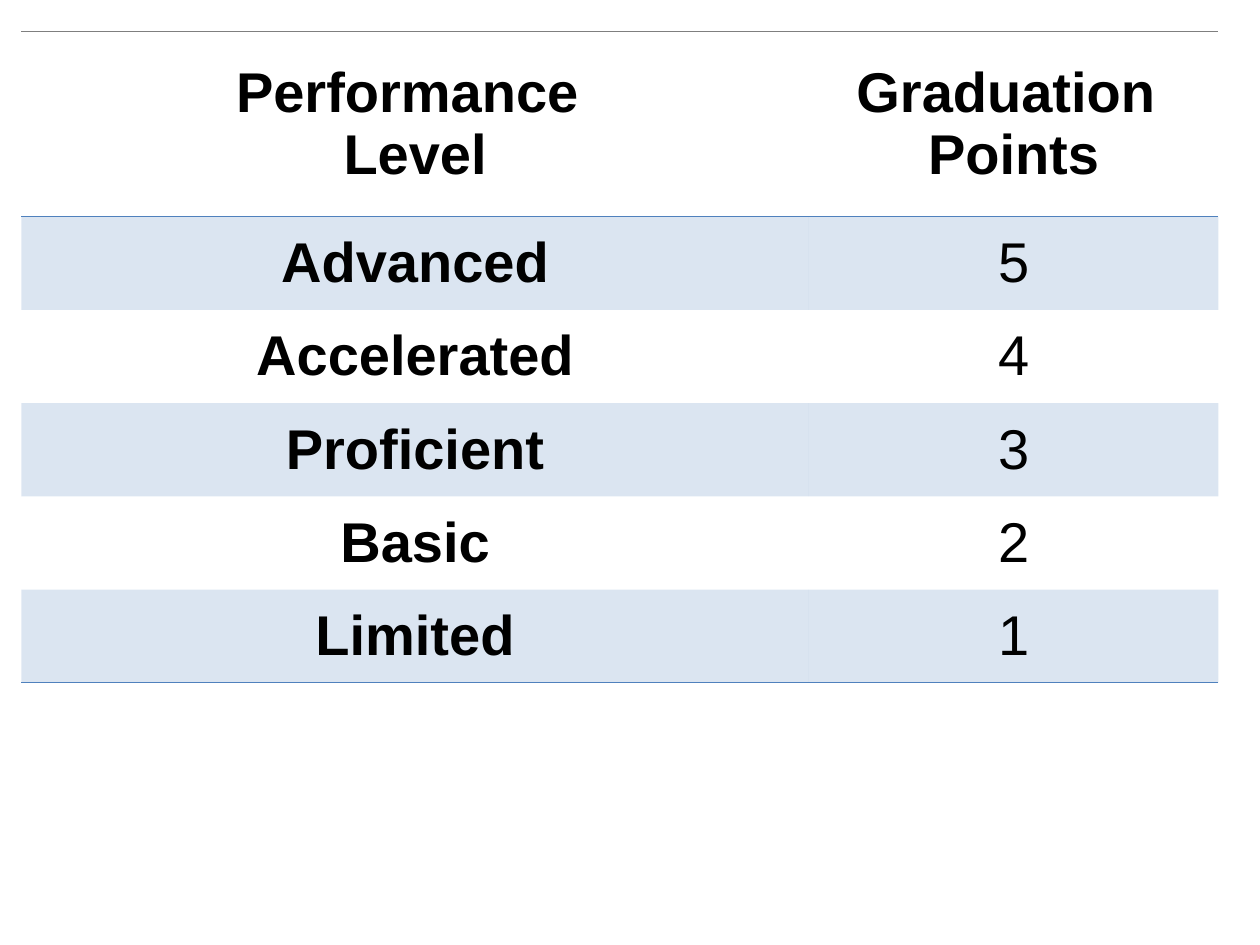
from dataclasses import dataclass

from lxml.etree import SubElement
from pptx import Presentation
from pptx.dml.color import RGBColor
from pptx.enum.text import MSO_ANCHOR as Anchor, PP_ALIGN as Align
from pptx.oxml.ns import qn
from pptx.util import Inches, Pt


@dataclass(frozen=True)
class Theme:
    font: str = "Arial"
    size: int = 32
    text: str = "000000"
    accent: str = "4F81BD"
    top_rule: str = "7F7F7F"
    band_opacity: int = 20
    plain_table_style: str = "{2D5ABB26-0587-4C30-8999-92F81FD0307C}"


THEME = Theme()

COLUMN_WIDTHS = (6.25, 3.25)
HEADER_HEIGHT = 1.47
ROW_HEIGHT = 0.74
HEADER = ("Performance \nLevel", "Graduation \nPoints")
LEVELS = ("Advanced", "Accelerated", "Proficient", "Basic", "Limited")


def write_text(cell, text, bold=False, align=Align.CENTER):
    """Write one paragraph per line of text."""
    cell.text = text
    for paragraph in cell.text_frame.paragraphs:
        paragraph.alignment = align
        for run in paragraph.runs:
            font = run.font
            font.name, font.size, font.bold = THEME.font, Pt(THEME.size), bold
            font.color.rgb = RGBColor.from_string(THEME.text)


def add_border(cell, side, color, width=1):
    """Draw one cell border; side is T or B, with T added first."""
    line = SubElement(cell._tc.get_or_add_tcPr(), qn(f"a:ln{side}"), w=str(Pt(width)))
    fill = SubElement(line, qn("a:solidFill"))
    SubElement(fill, qn("a:srgbClr"), val=color)


def fill_cell(cell, banded):
    if not banded:
        cell.fill.background()
        return
    cell.fill.solid()
    cell.fill.fore_color.rgb = RGBColor.from_string(THEME.accent)
    color = cell._tc.tcPr.find(f"{qn('a:solidFill')}/{qn('a:srgbClr')}")
    SubElement(color, qn("a:alpha"), val=str(THEME.band_opacity * 1000))


def format_cell(cell, row, last_row):
    cell.vertical_anchor = Anchor.MIDDLE
    cell.margin_left = cell.margin_right = Inches(0.07)
    cell.margin_top = cell.margin_bottom = 0
    # Rules above and below the header, and below the last row
    if row == 0:
        add_border(cell, "T", THEME.top_rule, width=0.75)
    if row in (0, last_row):
        add_border(cell, "B", THEME.accent)
    fill_cell(cell, banded=row % 2 == 1)


def add_points_table(slide):
    # Points count down to 1 at the lowest level
    points = range(len(LEVELS), 0, -1)
    rows = [HEADER, *((level, str(point)) for level, point in zip(LEVELS, points))]
    heights = [HEADER_HEIGHT] + [ROW_HEIGHT] * len(LEVELS)
    table = slide.shapes.add_table(
        len(rows), len(COLUMN_WIDTHS), Inches(0.17), Inches(0.25),
        Inches(sum(COLUMN_WIDTHS)), Inches(sum(heights))).table

    # Plain style, so that only the cell formats show
    table.first_row = table.horz_banding = False
    table._tbl.tblPr.find(qn("a:tableStyleId")).text = THEME.plain_table_style

    for column, width in zip(table.columns, COLUMN_WIDTHS):
        column.width = Inches(width)
    for row, (texts, height) in enumerate(zip(rows, heights)):
        table.rows[row].height = Inches(height)
        for column, text in enumerate(texts):
            cell = table.cell(row, column)
            write_text(cell, text, bold=row == 0 or column == 0)
            format_cell(cell, row, last_row=len(rows) - 1)


def main():
    presentation = Presentation()
    presentation.slide_width, presentation.slide_height = Inches(10), Inches(7.5)
    slide = presentation.slides.add_slide(presentation.slide_layouts[6])
    add_points_table(slide)
    presentation.save("out.pptx")


if __name__ == "__main__":
    main()
